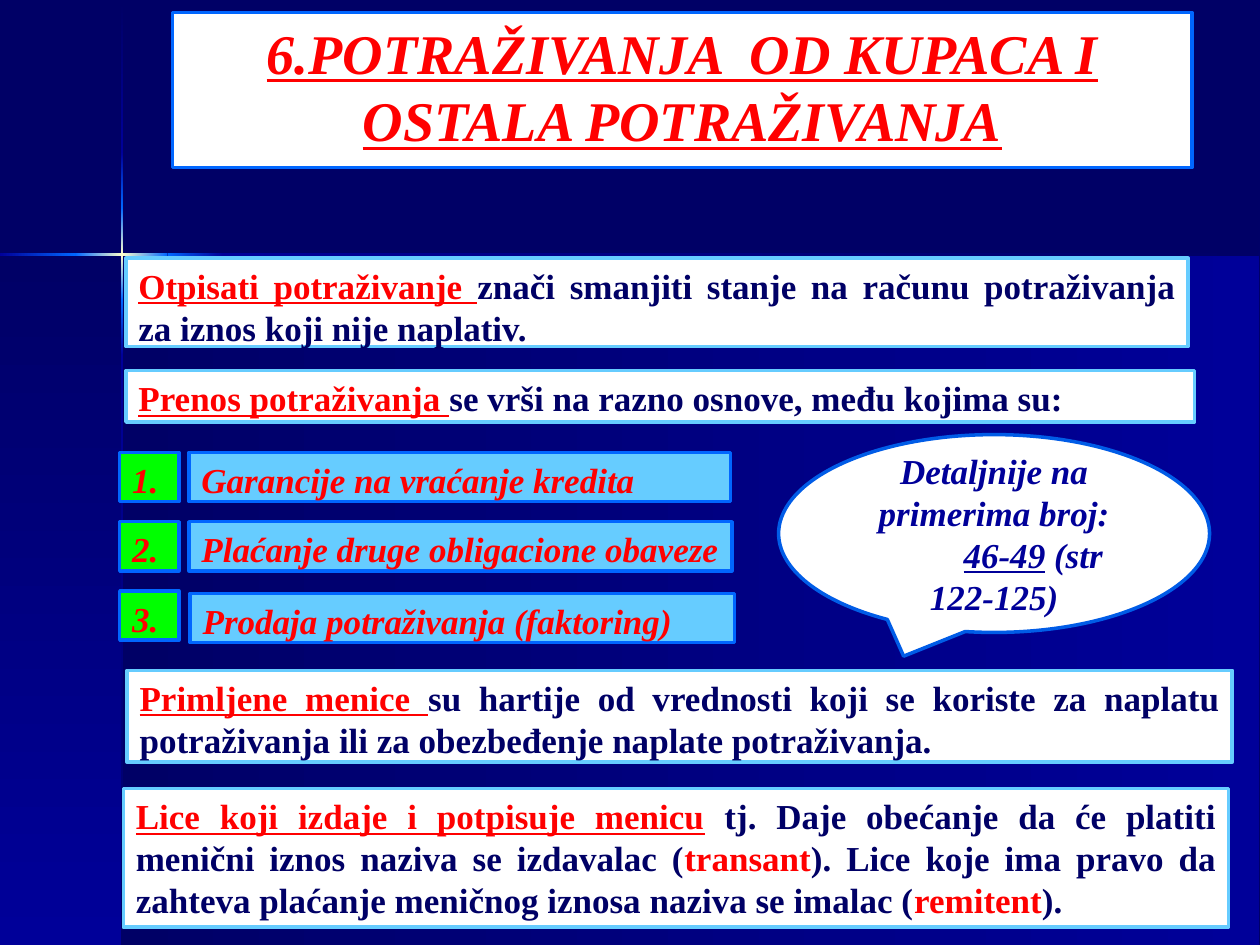
from itertools import pairwise

from pptx import Presentation
from pptx.dml.color import RGBColor
from pptx.enum import shapes, text
from pptx.util import Pt

PX = 9144  # EMU per px, 100 px to the inch


class Theme:
    font = "Times New Roman"
    title, body = 32, 20
    line = 2
    navy, blue, bright, glow = "000066", "000099", "0066FF", "FFFFCC"
    sky, green, red, white, rim = "66CCFF", "00FF00", "FF0000", "FFFFFF", "005CE7"


prs = Presentation()
prs.slide_width, prs.slide_height = 1000 * PX, 750 * PX
s = prs.slides.add_slide(prs.slide_layouts[6])
s.background.fill.solid()
s.background.fill.fore_color.rgb = RGBColor.from_string(Theme.navy)


def gradient_bar(x, y, w, h, start, end, down):
    sp = s.shapes.add_shape(shapes.MSO_SHAPE.RECTANGLE, x * PX, y * PX, w * PX, h * PX)
    sp.shadow.inherit = False
    sp.line.fill.background()
    sp.fill.gradient()
    sp.fill.gradient_angle = 270 if down else 0
    for stop, color in zip(sp.fill.gradient_stops, (start, end)):
        stop.color.rgb = RGBColor.from_string(color)


def text_shape(box, paragraphs, fill=Theme.white, line=Theme.sky, size=Theme.body,
               align=text.PP_ALIGN.LEFT, anchor=text.MSO_ANCHOR.TOP, italic=False,
               kind=shapes.MSO_SHAPE.RECTANGLE):
    """Each paragraph is a list of (text, color, underline) runs."""
    sp = s.shapes.add_shape(kind, *(v * PX for v in box))
    sp.shadow.inherit = False
    sp.fill.solid()
    sp.fill.fore_color.rgb = RGBColor.from_string(fill)
    sp.line.color.rgb = RGBColor.from_string(line)
    sp.line.width = Pt(Theme.line)
    tf = sp.text_frame
    tf.word_wrap = True
    tf.vertical_anchor = anchor
    for i, runs in enumerate(paragraphs):
        p = tf.add_paragraph() if i else tf.paragraphs[0]
        p.alignment = align
        for words, color, underline in runs:
            r = p.add_run()
            r.text = words
            r.font.name, r.font.size = Theme.font, Pt(size)
            r.font.bold, r.font.italic, r.font.underline = True, italic, underline
            r.font.color.rgb = RGBColor.from_string(color)
    return sp


# Background panels
gradient_bar(97, 202, 902, 548, Theme.navy, Theme.blue, down=False)
gradient_bar(0, 202, 97, 548, Theme.navy, Theme.blue, down=True)

# Glowing cross: each axis runs through positions and colours
vertical = [(1, Theme.navy), (121, Theme.blue), (165, Theme.bright), (202, Theme.glow),
            (238, Theme.bright), (282, Theme.blue), (750, Theme.navy)]
horizontal = [(0, Theme.blue), (60, Theme.bright), (97, Theme.glow),
              (133, Theme.bright), (177, Theme.blue), (999, Theme.navy)]
for (y, start), (y_end, end) in pairwise(vertical):
    gradient_bar(96, y, 2, y_end - y, start, end, down=True)
for (x, start), (x_end, end) in pairwise(horizontal):
    gradient_bar(x, 201, x_end - x, 2, start, end, down=False)

# Title
text_shape((137, 10, 809, 123),
           [[("6.POTRAŽIVANJA  OD KUPACA I OSTALA POTRAŽIVANJA", Theme.red, True)]],
           line=Theme.bright, size=Theme.title, align=text.PP_ALIGN.CENTER, italic=True)

# Definitions: underlined term, then its explanation
definitions = [
    ((100, 205, 843, 70), [
        ("Otpisati potraživanje ", Theme.red, True),
        ("znači smanjiti stanje na računu potraživanja za iznos koji nije naplativ.",
         Theme.navy, False)]),
    ((100, 294, 848, 41), [
        ("Prenos potraživanja ", Theme.red, True),
        ("se vrši na razno osnove, među kojima su:", Theme.navy, False)]),
    ((101, 532, 877, 73), [
        ("Primljene menice ", Theme.red, True),
        ("su hartije od vrednosti koji se koriste za naplatu potraživanja "
         "ili za obezbeđenje naplate potraživanja.", Theme.navy, False)]),
    ((98, 626, 877, 110), [
        ("Lice koji izdaje i potpisuje menicu", Theme.red, True),
        (" tj. Daje obećanje da će platiti menični iznos naziva se izdavalac (",
         Theme.navy, False),
        ("transant", Theme.red, False),
        ("). Lice koje ima pravo da zahteva plaćanje meničnog iznosa naziva se imalac (",
         Theme.navy, False),
        ("remitent", Theme.red, False),
        (").", Theme.navy, False)]),
]
for box, runs in definitions:
    text_shape(box, [runs], align=text.PP_ALIGN.JUSTIFY)

# Numbered grounds for transfer
grounds = [
    (359, (150, 359, 430, 39), "Garancije na vraćanje kredita"),
    (414, (150, 414, 431, 39), "Plaćanje druge obligacione obaveze"),
    (469, (151, 471, 432, 39), "Prodaja potraživanja (faktoring)"),
]
for number, (top, box, words) in enumerate(grounds, 1):
    text_shape((95, top, 47, 39), [[(f"{number}.", Theme.red, False)]],
               fill=Theme.green, line=Theme.bright, italic=True)
    text_shape(box, [[(words, Theme.red, False)]],
               fill=Theme.sky, line=Theme.bright, italic=True)

# Callout, with the page reference indented on its first line
sp = text_shape((618, 345, 342, 157),
                [[("Detaljnije na primerima broj:", Theme.blue, False)],
                 [("46-49", Theme.blue, True), (" (str 122-125)", Theme.blue, False)]],
                line=Theme.rim, align=text.PP_ALIGN.CENTER,
                anchor=text.MSO_ANCHOR.MIDDLE, italic=True,
                kind=shapes.MSO_SHAPE.OVAL_CALLOUT)
sp.adjustments[0], sp.adjustments[1] = -0.21, 0.62
sp.text_frame.paragraphs[1]._p.get_or_add_pPr().set("indent", str(62 * PX))

prs.save("out.pptx")
